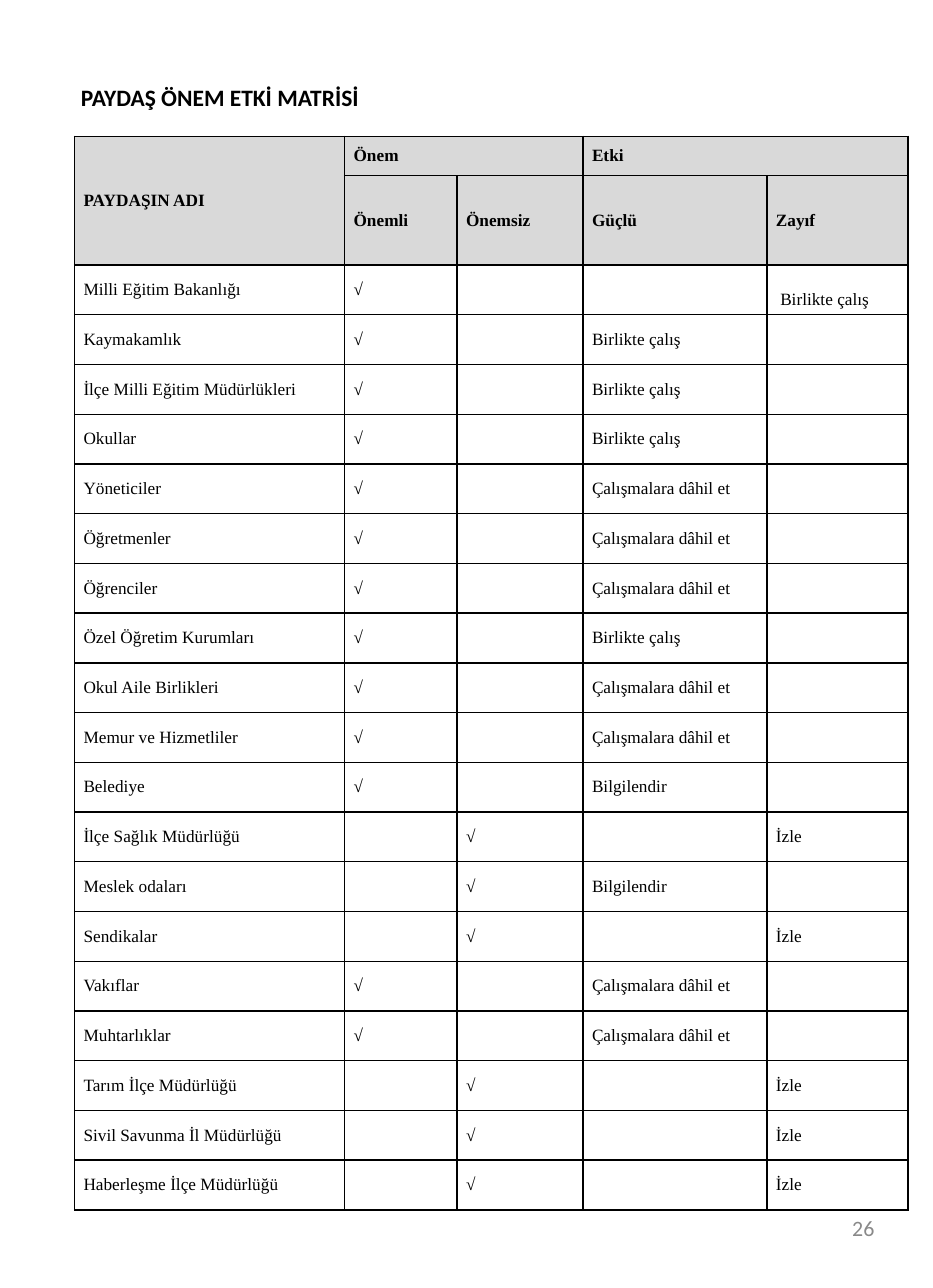
from lxml.etree import SubElement
from pptx import Presentation
from pptx.dml.color import RGBColor
from pptx.enum.text import MSO_ANCHOR, PP_ALIGN
from pptx.oxml.ns import qn
from pptx.util import Pt

TITLE = "PAYDAŞ ÖNEM ETKİ MATRİSİ"
PAGE_NUMBER = "26"
HEADERS = [
    ("PAYDAŞIN ADI", "Önem", "", "Etki", ""),
    ("", "Önemli", "Önemsiz", "Güçlü", "Zayıf"),
]
HEADER_SPANS = [((0, 0), (1, 0)), ((0, 1), (0, 2)), ((0, 3), (0, 4))]
WORK_TOGETHER = "Birlikte çalış"
INVOLVE = "Çalışmalara dâhil et"
INFORM = "Bilgilendir"
WATCH = "İzle"
STAKEHOLDERS = [
    ("Milli Eğitim Bakanlığı", "Önemli", "Zayıf", WORK_TOGETHER),
    ("Kaymakamlık", "Önemli", "Güçlü", WORK_TOGETHER),
    ("İlçe Milli Eğitim Müdürlükleri", "Önemli", "Güçlü", WORK_TOGETHER),
    ("Okullar", "Önemli", "Güçlü", WORK_TOGETHER),
    ("Yöneticiler", "Önemli", "Güçlü", INVOLVE),
    ("Öğretmenler", "Önemli", "Güçlü", INVOLVE),
    ("Öğrenciler", "Önemli", "Güçlü", INVOLVE),
    ("Özel Öğretim Kurumları", "Önemli", "Güçlü", WORK_TOGETHER),
    ("Okul Aile Birlikleri", "Önemli", "Güçlü", INVOLVE),
    ("Memur ve Hizmetliler", "Önemli", "Güçlü", INVOLVE),
    ("Belediye", "Önemli", "Güçlü", INFORM),
    ("İlçe Sağlık Müdürlüğü", "Önemsiz", "Zayıf", WATCH),
    ("Meslek odaları", "Önemsiz", "Güçlü", INFORM),
    ("Sendikalar", "Önemsiz", "Zayıf", WATCH),
    ("Vakıflar", "Önemli", "Güçlü", INVOLVE),
    ("Muhtarlıklar", "Önemli", "Güçlü", INVOLVE),
    ("Tarım İlçe Müdürlüğü", "Önemsiz", "Zayıf", WATCH),
    ("Sivil Savunma İl Müdürlüğü", "Önemsiz", "Zayıf", WATCH),
    ("Haberleşme İlçe Müdürlüğü", "Önemsiz", "Zayıf", WATCH),
]
COLUMN_WIDTHS = [172.4, 71.8, 80.4, 117.4, 90]
HEADER_HEIGHTS = [25.2, 57]
ROW_HEIGHT = 31.75
BLACK, GREY, HEADER_FILL, WHITE = "000000", "898989", "D9D9D9", "FFFFFF"


def color(hex_value):
    return RGBColor.from_string(hex_value)


def add_run(paragraph, text, size, font_name, hex_value, bold=False):
    run = paragraph.add_run()
    run.text = text
    run.font.size = Pt(size)
    run.font.name = font_name
    run.font.bold = bold
    run.font.color.rgb = color(hex_value)


def add_label(slide, box, insets, text, size, hex_value, bold, align, anchor):
    frame = slide.shapes.add_textbox(*map(Pt, box)).text_frame
    frame.word_wrap = True
    frame.vertical_anchor = anchor
    frame.margin_left = frame.margin_right = Pt(insets[0])
    frame.margin_top = frame.margin_bottom = Pt(insets[1])
    frame.paragraphs[0].alignment = align
    add_run(frame.paragraphs[0], text, size, "Calibri", hex_value, bold)


def add_borders(cell):
    properties = cell._tc.get_or_add_tcPr()
    for position, side in enumerate(("lnL", "lnR", "lnT", "lnB")):
        line = SubElement(properties, qn(f"a:{side}"), w=str(Pt(1)))
        properties.insert(position, line)
        fill = SubElement(line, qn("a:solidFill"))
        SubElement(fill, qn("a:srgbClr"), val=BLACK)


def matrix_row(name, importance, influence, action):
    marks = {importance: "√", influence: action}
    return (name, *(marks.get(heading, "") for heading in HEADERS[1][1:]))


def add_matrix(slide):
    rows = HEADERS + [matrix_row(*entry) for entry in STAKEHOLDERS]
    heights = HEADER_HEIGHTS + [ROW_HEIGHT] * len(STAKEHOLDERS)
    matrix = slide.shapes.add_table(
        len(rows), len(COLUMN_WIDTHS), Pt(47.5), Pt(87),
        Pt(sum(COLUMN_WIDTHS)), Pt(sum(heights))).table
    for column, width in zip(matrix.columns, COLUMN_WIDTHS):
        column.width = Pt(width)
    for r, (values, height) in enumerate(zip(rows, heights)):
        matrix.rows[r].height = Pt(height)
        is_header = r < len(HEADERS)
        for c, value in enumerate(values):
            cell = matrix.cell(r, c)
            cell.margin_left = cell.margin_right = Pt(5.8)
            cell.margin_top = cell.margin_bottom = Pt(0)
            cell.vertical_anchor = MSO_ANCHOR.MIDDLE
            cell.fill.solid()
            cell.fill.fore_color.rgb = color(HEADER_FILL if is_header else WHITE)
            add_borders(cell)
            if value:
                add_run(cell.text_frame.paragraphs[0], value, 11,
                        "Times New Roman", BLACK, is_header)
    for start, end in HEADER_SPANS:
        matrix.cell(*start).merge(matrix.cell(*end))
    ministry_action = matrix.cell(len(HEADERS), 4)
    ministry_action.margin_left = Pt(8.55)
    ministry_action.margin_top = Pt(12.65)


def main():
    """Build the stakeholder importance and influence matrix."""
    presentation = Presentation()
    presentation.slide_width = Pt(595.44)
    presentation.slide_height = Pt(822.24)
    slide = presentation.slides.add_slide(presentation.slide_layouts[6])
    add_matrix(slide)
    add_label(slide, (427, 761.8, 139, 43.9), (7.9, 4.3), PAGE_NUMBER,
              14, GREY, False, PP_ALIGN.RIGHT, MSO_ANCHOR.MIDDLE)
    add_label(slide, (44.6, 49.7, 451.4, 25.9), (7.2, 3.6), TITLE,
              15, BLACK, True, PP_ALIGN.LEFT, MSO_ANCHOR.TOP)
    presentation.save("out.pptx")


if __name__ == "__main__":
    main()
